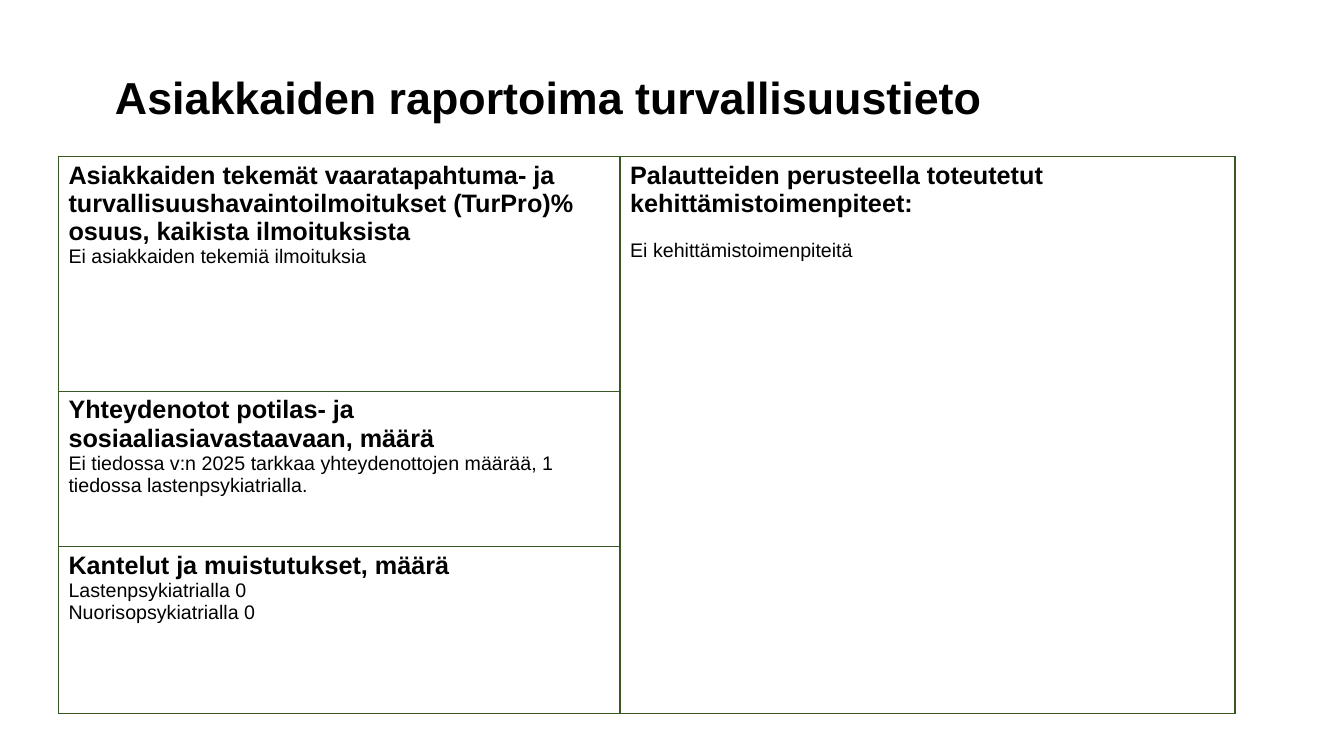
from dataclasses import dataclass

from lxml import etree
from pptx import Presentation, util as u
from pptx.dml.color import RGBColor
from pptx.enum import text
from pptx.oxml import ns

TITLE = "Asiakkaiden raportoima turvallisuustieto"
LEFT_CELLS = [
    ("Asiakkaiden tekemät vaaratapahtuma- ja turvallisuushavaintoilmoitukset "
     "(TurPro)% osuus, kaikista ilmoituksista",
     ["Ei asiakkaiden tekemiä ilmoituksia"]),
    ("Yhteydenotot potilas- ja sosiaaliasiavastaavaan, määrä",
     ["Ei tiedossa v:n 2025 tarkkaa yhteydenottojen määrää, 1 tiedossa "
      "lastenpsykiatrialla."]),
    ("Kantelut ja muistutukset, määrä",
     ["Lastenpsykiatrialla 0", "Nuorisopsykiatrialla 0"]),
]
RIGHT_CELL = ("Palautteiden perusteella toteutetut kehittämistoimenpiteet:",
              ["Ei kehittämistoimenpiteitä"])

SLIDE_SIZE = (13.33, 7.5)
TITLE_BOX = (1.04, 0.27, 10.11, 1.45)
TABLE_CORNER = (0.58, 1.55)
COLUMNS = (5.57, 6.1)
ROWS = (2.33, 1.54, 1.66)


@dataclass(frozen=True)
class Theme:
    font: str = "Arial"
    ink: str = "000000"
    paper: str = "FFFFFF"
    border: str = "385723"
    border_width: float = 1
    title: int = 32
    heading: int = 18
    body: int = 14
    body_gap: int = 16


THEME = Theme()


def add_span(para, words, size, bold):
    span = para.add_run()
    span.text = words
    span.font.name = THEME.font
    span.font.size = u.Pt(size)
    span.font.bold = bold
    span.font.color.rgb = RGBColor.from_string(THEME.ink)


def fill_cell(cell, content, gap=0):
    """Write a bold heading and its body lines, with gap points between them."""
    heading, lines = content
    frame = cell.text_frame
    add_span(frame.paragraphs[0], heading, THEME.heading, True)
    for number, line in enumerate(lines):
        para = frame.add_paragraph()
        if gap and number == 0:
            para.space_before = u.Pt(gap)
        add_span(para, line, THEME.body, False)


def style_cell(cell):
    cell.fill.solid()
    cell.fill.fore_color.rgb = RGBColor.from_string(THEME.paper)
    properties = cell._tc.get_or_add_tcPr()
    for index, side in enumerate(("lnL", "lnR", "lnT", "lnB")):
        line = etree.Element(ns.qn(f"a:{side}"), w=str(u.Pt(THEME.border_width)))
        solid = etree.SubElement(line, ns.qn("a:solidFill"))
        etree.SubElement(solid, ns.qn("a:srgbClr"), val=THEME.border)
        properties.insert(index, line)


def add_title(page):
    title = page.shapes.title
    title.left, title.top, title.width, title.height = map(u.Inches, TITLE_BOX)
    frame = title.text_frame
    frame.word_wrap = True
    frame.vertical_anchor = text.MSO_ANCHOR.MIDDLE
    para = frame.paragraphs[0]
    para.alignment = text.PP_ALIGN.LEFT
    para.line_spacing = 0.9
    add_span(para, TITLE, THEME.title, True)


def add_report_table(page):
    size = (sum(COLUMNS), sum(ROWS))
    table = page.shapes.add_table(
        len(ROWS), len(COLUMNS), *map(u.Inches, TABLE_CORNER + size)).table
    table.first_row = table.horz_banding = False
    for column, width in zip(table.columns, COLUMNS):
        column.width = u.Inches(width)
    for row, height in zip(table.rows, ROWS):
        row.height = u.Inches(height)
    for cell in table.iter_cells():
        style_cell(cell)
    table.cell(0, 1).merge(table.cell(len(ROWS) - 1, 1))
    for row, content in enumerate(LEFT_CELLS):
        fill_cell(table.cell(row, 0), content)
    fill_cell(table.cell(0, 1), RIGHT_CELL, THEME.body_gap)


def main():
    deck = Presentation()
    deck.slide_width, deck.slide_height = map(u.Inches, SLIDE_SIZE)
    page = deck.slides.add_slide(deck.slide_layouts.get_by_name("Title Only"))
    add_title(page)
    add_report_table(page)
    deck.save("out.pptx")


if __name__ == "__main__":
    main()
